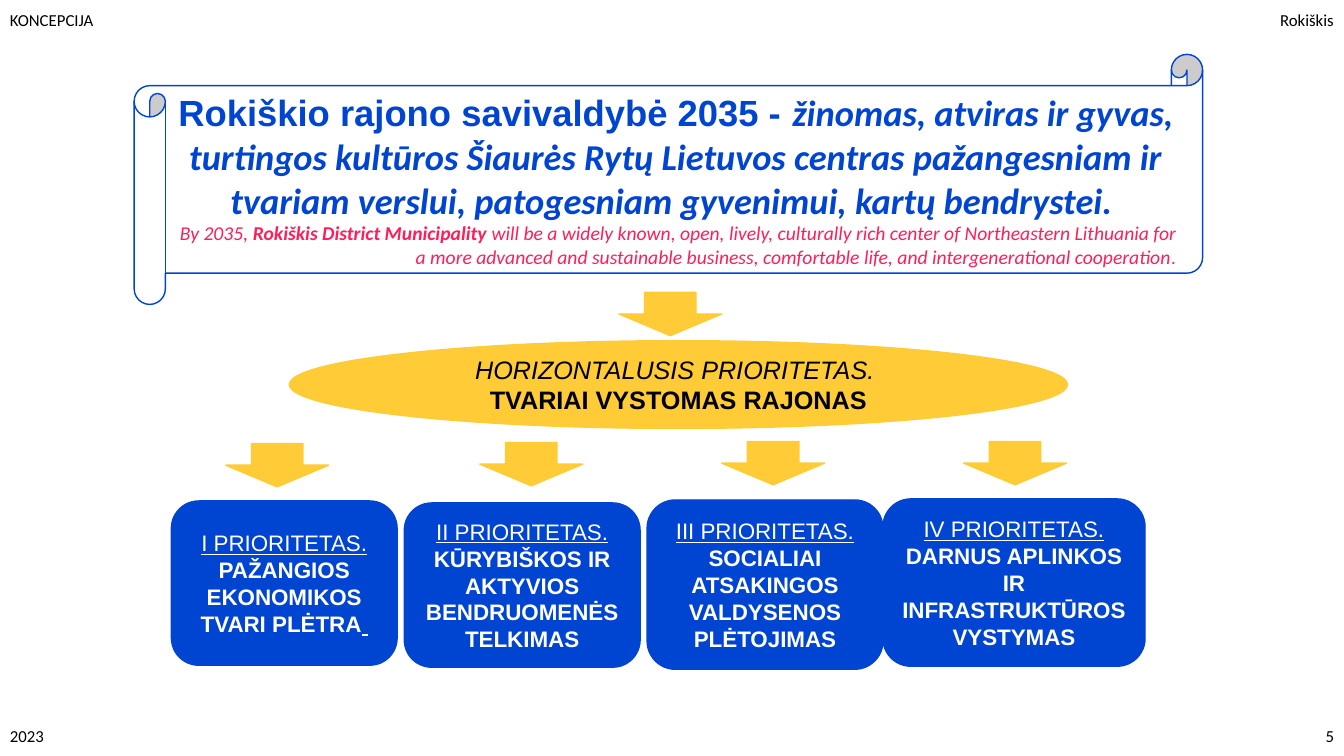
from pptx import Presentation
from pptx.dml.color import RGBColor
from pptx.enum.shapes import MSO_SHAPE
from pptx.enum.text import MSO_ANCHOR, PP_ALIGN
from pptx.util import Inches, Pt

BLUE = RGBColor(0x00, 0x44, 0xD2)
YELLOW = RGBColor(0xFF, 0xCC, 0x37)
PINK = RGBColor(0xFF, 0x1D, 0x5A)
WHITE = RGBColor(0xFF, 0xFF, 0xFF)
BLACK = RGBColor(0x00, 0x00, 0x00)

prs = Presentation()
prs.slide_width = Inches(13.333)
prs.slide_height = Inches(7.5)
COL = prs.slide_width / 100
ROW = prs.slide_height / 100
s = prs.slides.add_slide(prs.slide_layouts[6])


def add_run(p, text, font="Arial", size=16, color=BLACK, bold=False, italic=False, underline=False):
    r = p.add_run()
    r.text = text
    r.font.name = font
    r.font.size = Pt(size)
    r.font.color.rgb = color
    r.font.bold = bold
    r.font.italic = italic
    r.font.underline = underline


def add_block(kind, x, y, w, h, fill=YELLOW, line=YELLOW):
    sp = s.shapes.add_shape(kind, int(x * COL), int(y * ROW), int(w * COL), int(h * ROW))
    sp.shadow.inherit = False
    sp.fill.solid()
    sp.fill.fore_color.rgb = fill
    sp.line.color.rgb = line
    sp.line.width = Pt(1)
    tf = sp.text_frame
    tf.word_wrap = True
    tf.vertical_anchor = MSO_ANCHOR.MIDDLE
    tf.paragraphs[0].alignment = PP_ALIGN.CENTER
    return tf


for text, x, y, w, h, align, anchor in [
    ("Rokiškis", 81.83, 0.67, 18.15, 4, PP_ALIGN.RIGHT, MSO_ANCHOR.TOP),
    ("2023", 0, 94.67, 22.5, 5.33, PP_ALIGN.LEFT, MSO_ANCHOR.MIDDLE),
    ("KONCEPCIJA", 0, 0, 33.75, 5.33, PP_ALIGN.LEFT, MSO_ANCHOR.MIDDLE),
    ("5", 77.5, 94.67, 22.5, 5.33, PP_ALIGN.RIGHT, MSO_ANCHOR.MIDDLE),
]:
    sp = s.shapes.add_textbox(int(x * COL), int(y * ROW), int(w * COL), int(h * ROW))
    tf = sp.text_frame
    tf.word_wrap = True
    tf.vertical_anchor = anchor
    tf.paragraphs[0].alignment = align
    add_run(tf.paragraphs[0], text, font="Calibri", size=12)

tf = add_block(MSO_SHAPE.HORIZONTAL_SCROLL, 9.98, 7.2, 79.5, 33.07, fill=WHITE, line=BLUE)
p = tf.paragraphs[0]
add_run(p, "Rokiškio rajono savivaldybė 2035 - ", size=26, color=BLUE, bold=True)
add_run(p, "žinomas, atviras ir gyvas, turtingos kultūros Šiaurės Rytų Lietuvos centras "
        "pažangesniam ir tvariam verslui, patogesniam gyvenimui, kartų bendrystei. ",
        font="Calibri", size=26, color=BLUE, bold=True, italic=True)
p = tf.add_paragraph()
p.alignment = PP_ALIGN.RIGHT
for text, font, bold in [
    ("By 2035, ", "Calibri", False),
    ("Rokiškis District Municipality", "Calibri", True),
    (" will be a widely known, open, lively, culturally rich center of Northeastern Lithuania "
     "for a more advanced and sustainable business, comfortable life, and intergenerational "
     "cooperation", "Calibri", False),
    (".", "Arial", False),
]:
    add_run(p, text, font=font, size=14, color=PINK, bold=bold, italic=True)

tf = add_block(MSO_SHAPE.OVAL, 21.53, 45.07, 57.9, 11.6)
add_run(tf.paragraphs[0], "HORIZONTALUSIS PRIORITETAS. ", size=18, italic=True)
p = tf.add_paragraph()
p.alignment = PP_ALIGN.CENTER
add_run(p, "TVARIAI VYSTOMAS RAJONAS", size=18, bold=True)

for x, y in [(46.05, 38.67), (16.8, 58.67), (35.7, 58.53), (53.7, 58.4), (71.7, 58.4)]:
    add_block(MSO_SHAPE.DOWN_ARROW, x, y, 7.65, 5.73)

for number, goal, tail, x, y, w, h in [
    ("I", "PAŽANGIOS EKONOMIKOS TVARI PLĖTRA", " ", 12.75, 66.27, 16.8, 21.73),
    ("II", "KŪRYBIŠKOS IR AKTYVIOS BENDRUOMENĖS TELKIMAS", "", 30.08, 66.53, 17.55, 21.73),
    ("III", "SOCIALIAI ATSAKINGOS VALDYSENOS PLĖTOJIMAS", "", 48.15, 66.13, 17.55, 22.4),
    ("IV", "DARNUS APLINKOS IR INFRASTRUKTŪROS VYSTYMAS", "", 65.7, 66, 19.5, 22.13),
]:
    p = add_block(MSO_SHAPE.ROUNDED_RECTANGLE, x, y, w, h, fill=BLUE, line=BLUE).paragraphs[0]
    add_run(p, f"{number} PRIORITETAS. ", color=WHITE, underline=True)
    add_run(p, goal, color=WHITE, bold=True)
    if tail:
        add_run(p, tail, color=WHITE, underline=True)

prs.save("out.pptx")
